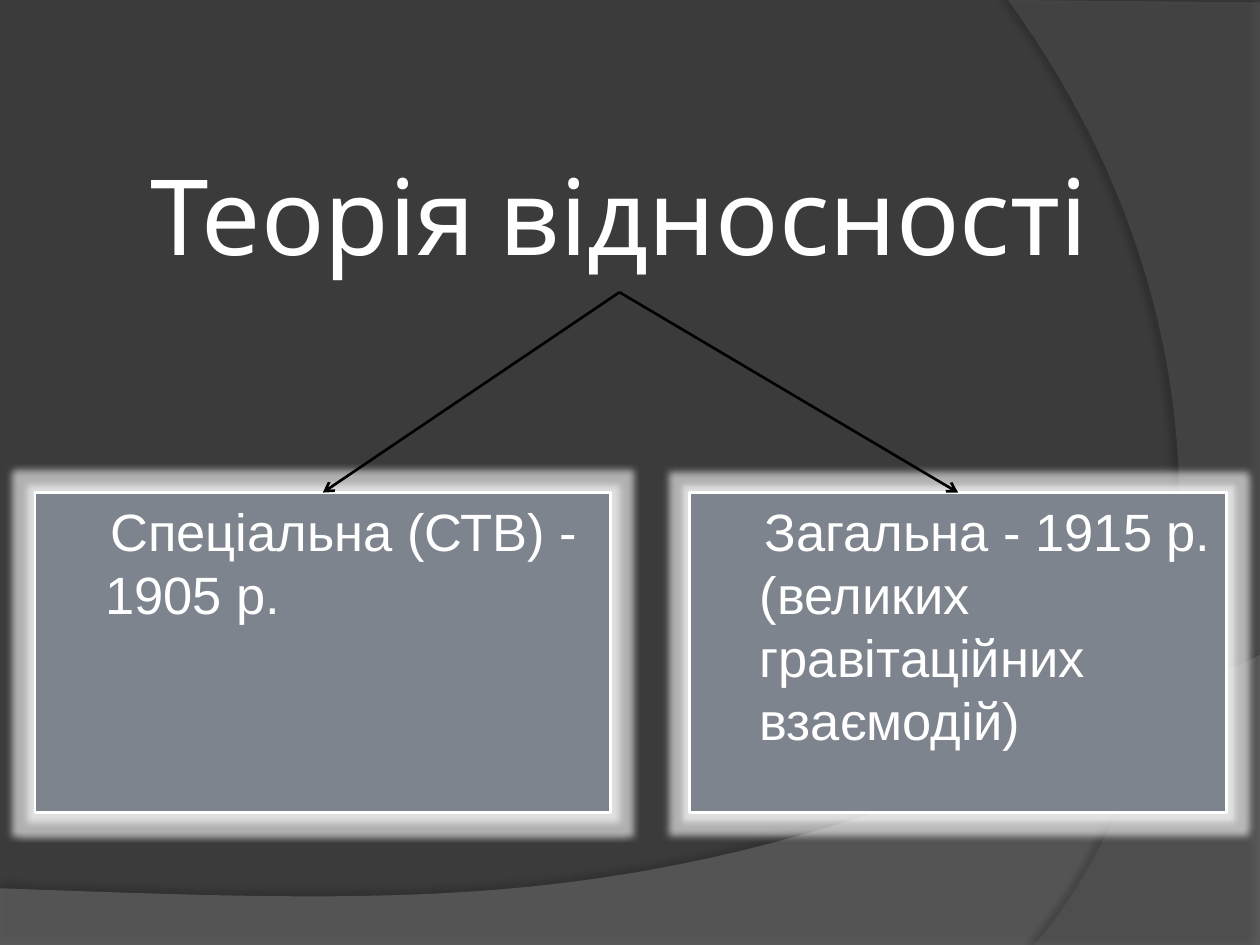
from lxml.etree import SubElement
from pptx import Presentation
from pptx.dml.color import RGBColor
from pptx.enum.shapes import MSO_CONNECTOR, MSO_SHAPE
from pptx.enum.text import MSO_ANCHOR, MSO_AUTO_SIZE, PP_ALIGN
from pptx.oxml import parse_xml
from pptx.oxml.ns import nsdecls, qn
from pptx.util import Pt

COLORS = {
    "background": "3B3B3B",
    "lower wave": "7F7F7F",
    "right wave": "5E5E5E",
    "box": "7E848D",
    "white": "FFFFFF",
    "black": "000000",
}
CURVE_STEPS = 60


def color(name):
    return RGBColor.from_string(COLORS[name])


def curve_points(start, control_1, control_2, end):
    """Return points along a cubic Bezier curve."""
    points = []
    for step in range(CURVE_STEPS + 1):
        t = step / CURVE_STEPS
        weights = ((1 - t) ** 3, 3 * t * (1 - t) ** 2, 3 * t**2 * (1 - t), t**3)
        corners = (start, control_1, control_2, end)
        points.append(tuple(
            sum(weight * corner[axis] for weight, corner in zip(weights, corners))
            for axis in (0, 1)
        ))
    return points


presentation = Presentation()
presentation.slide_width = Pt(720)
presentation.slide_height = Pt(540)
slide = presentation.slides.add_slide(presentation.slide_layouts[5])
slide.background.fill.solid()
slide.background.fill.fore_color.rgb = color("background")

# Translucent waves behind the content
waves = [
    {"color": "lower wave", "opacity": 45, "corners": [(0, 540.5), (720, 540.5)],
     "curve": [(720, 374.4), (402.5, 524.9), (281.5, 517.7), (0, 507.6)],
     "shadow": {"opacity": 35, "distance": 3.5, "angle": 270}},
    {"color": "right wave", "opacity": 40, "corners": [(720, 1.4), (720, 540)],
     "curve": [(591.1, 540), (673.2, 445.7), (733, 216), (576, 0)],
     "shadow": {"opacity": 45, "distance": 4, "angle": 180}},
]
for wave in waves:
    points = [(Pt(x), Pt(y)) for x, y in wave["corners"] + curve_points(*wave["curve"])]
    builder = slide.shapes.build_freeform(*points[0])
    builder.add_line_segments(points[1:], close=True)
    shape = builder.convert_to_shape()
    shape.line.fill.background()
    shape.fill.solid()
    shape.fill.fore_color.rgb = color(wave["color"])
    fill_color = shape.element.spPr.find(qn("a:solidFill")).find(qn("a:srgbClr"))
    SubElement(fill_color, qn("a:alpha"), val=str(wave["opacity"] * 1000))
    shadow = wave["shadow"]
    shape.element.spPr.append(parse_xml(
        f'<a:effectLst {nsdecls("a")}><a:outerShdw blurRad="{Pt(4)}" '
        f'dist="{Pt(shadow["distance"])}" dir="{shadow["angle"] * 60000}" '
        f'algn="ctr" rotWithShape="0"><a:srgbClr val="{COLORS["black"]}">'
        f'<a:alpha val="{shadow["opacity"] * 1000}"/></a:srgbClr>'
        '</a:outerShdw></a:effectLst>'
    ))

# Title, brought in front of the waves
title = slide.shapes.title
title.element.getparent().append(title.element)
title.left, title.top, title.width, title.height = Pt(60), Pt(77), Pt(588), Pt(90)
title_frame = title.text_frame
title_format = {
    "word_wrap": True, "auto_size": MSO_AUTO_SIZE.NONE,
    "vertical_anchor": MSO_ANCHOR.MIDDLE,
    "margin_left": Pt(3.6), "margin_right": Pt(3.6),
    "margin_top": Pt(3.6), "margin_bottom": Pt(3.6),
}
for name, value in title_format.items():
    setattr(title_frame, name, value)
title_frame.text = "Теорія відносності"
paragraph = title_frame.paragraphs[0]
paragraph.alignment = PP_ALIGN.CENTER
paragraph.font.name = "Karla"
paragraph.font.size = Pt(60)
paragraph.font.color.rgb = color("white")

# The two branches: glowing boxes joined to the title by arrows
branches = [
    ("Загальна - 1915 р. (великих гравітаційних взаємодій)", 394, 307),
    ("Спеціальна (СТВ) - 1905 р.", 20, 329),
]
boxes = []
for text, left, width in branches:
    box = slide.shapes.add_shape(
        MSO_SHAPE.RECTANGLE, Pt(left), Pt(281.5), Pt(width), Pt(183))
    box.fill.solid()
    box.fill.fore_color.rgb = color("box")
    box.line.color.rgb = color("white")
    box.line.width = Pt(1.5)
    box.element.spPr.append(parse_xml(
        f'<a:effectLst {nsdecls("a")}><a:glow rad="{Pt(8)}">'
        f'<a:srgbClr val="{COLORS["white"]}"><a:alpha val="60000"/></a:srgbClr>'
        '</a:glow></a:effectLst>'
    ))
    frame = box.text_frame
    frame.word_wrap = True
    frame.vertical_anchor = MSO_ANCHOR.TOP
    frame.text = text
    paragraph = frame.paragraphs[0]
    paragraph.alignment = PP_ALIGN.LEFT
    properties = paragraph._p.get_or_add_pPr()
    properties.set("marL", str(Pt(33)))
    properties.set("indent", str(Pt(3)))
    paragraph.font.name = "Arial"
    paragraph.font.size = Pt(30)
    paragraph.font.color.rgb = color("white")
    boxes.append(box)

for box in boxes:
    arrow = slide.shapes.add_connector(MSO_CONNECTOR.STRAIGHT, 0, 0, 0, 0)
    arrow.begin_connect(title, 2)
    arrow.end_connect(box, 0)
    arrow.line.color.rgb = color("black")
    arrow.line.width = Pt(1.5)
    SubElement(arrow.line._get_or_add_ln(), qn("a:tailEnd"), type="arrow")
    SubElement(arrow.element.spPr, qn("a:effectLst"))

presentation.save("out.pptx")
